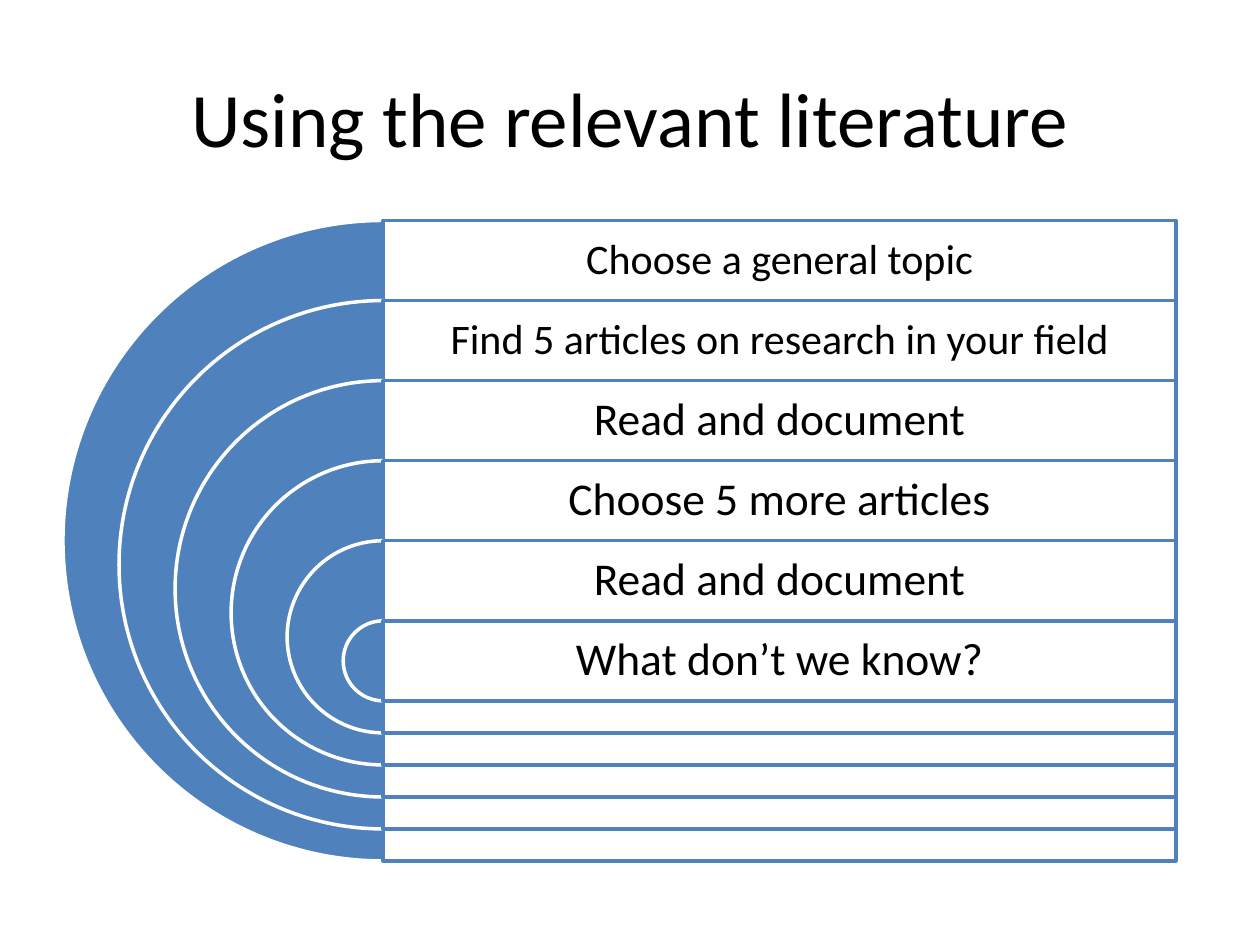
from dataclasses import dataclass

from lxml.etree import SubElement
from pptx import Presentation
from pptx.dml.color import RGBColor as RGB
from pptx.enum.shapes import MSO_SHAPE as SHAPE
from pptx.enum.text import MSO_ANCHOR as ANCHOR, PP_ALIGN as ALIGN
from pptx.oxml.ns import qn
from pptx.util import Pt


@dataclass(frozen=True)
class Theme:
    font: str = "Calibri"
    text: RGB = RGB(0, 0, 0)
    paper: RGB = RGB(255, 255, 255)
    accent: RGB = RGB(0x4F, 0x81, 0xBD)
    title_size: int = 44
    long_size: int = 24
    step_size: int = 26
    line: int = 2


THEME = Theme()
HALF_PIE = (54, 162)  # left half, in units of 100,000 angle steps
STEPS = [
    ("Choose a general topic", THEME.long_size),
    ("Find 5 articles on research in your field", THEME.long_size),
    ("Read and document", THEME.step_size),
    ("Choose 5 more articles", THEME.step_size),
    ("Read and document", THEME.step_size),
    ("What don’t we know?", THEME.step_size),
]


def set_all(obj, values):
    for name, value in values.items():
        setattr(obj, name, value)


def write_text(sp, text, size, inset, **para):
    """Put one centred line of text in a shape."""
    tf = sp.text_frame
    set_all(tf, {"word_wrap": True, "vertical_anchor": ANCHOR.MIDDLE})
    sides = ("left", "top", "right", "bottom")
    set_all(tf, {f"margin_{side}": Pt(inset) for side in sides})
    p = tf.paragraphs[0]
    set_all(p, {"alignment": ALIGN.CENTER, **para})
    r = p.add_run()
    r.text = text
    set_all(r.font, {"name": THEME.font, "size": Pt(size)})
    r.font.color.rgb = THEME.text


def add_panel(shapes, kind, box, fill, line):
    sp = shapes.add_shape(kind, *map(Pt, box))
    sp.shadow.inherit = False
    sp.fill.solid()
    sp.fill.fore_color.rgb = fill
    sp.line.color.rgb = line
    sp.line.width = Pt(THEME.line)
    return sp


def add_title(slide, box):
    title = slide.shapes.title
    set_all(title, dict(zip(("left", "top", "width", "height"), map(Pt, box))))
    write_text(title, "Using the relevant literature", THEME.title_size, 3.6)


def add_target(slide, box, steps):
    """Nested half circles, each with a panel and a label on its right."""
    left, top, width, height = box
    shapes = slide.shapes.add_group_shape().shapes
    center = left + height / 2
    panel_width = left + width - center
    row = height / (len(steps) + 2)
    shrink = (height - row) / (len(steps) - 1)

    for i, (text, size) in enumerate(steps):
        y, d = top + i * row, height - i * shrink

        # Half circle
        pie = add_panel(shapes, SHAPE.PIE, (center - d / 2, y, d, d),
                        THEME.accent, THEME.paper)
        for n, angle in enumerate(HALF_PIE):
            pie.adjustments[n] = angle

        # Panel, slightly see-through
        panel = add_panel(shapes, SHAPE.RECTANGLE, (center, y, panel_width, d),
                          THEME.paper, THEME.accent)
        color = panel.fill._xPr.find(qn("a:solidFill"))[0]
        SubElement(color, qn("a:alpha"), val="90000")

        # Label in the panel's top row
        label = shapes.add_textbox(*map(Pt, (center, y, panel_width, row)))
        write_text(label, text, size, 0.3 * size,
                   line_spacing=0.9, space_after=Pt(0.35 * size))


def main():
    prs = Presentation()
    set_all(prs, {"slide_width": Pt(720), "slide_height": Pt(540)})
    slide = prs.slides.add_slide(prs.slide_layouts[5])
    add_title(slide, (36, 21.6, 648, 90))
    add_target(slide, (36, 126, 636, 366), STEPS)
    prs.save("out.pptx")


if __name__ == "__main__":
    main()
